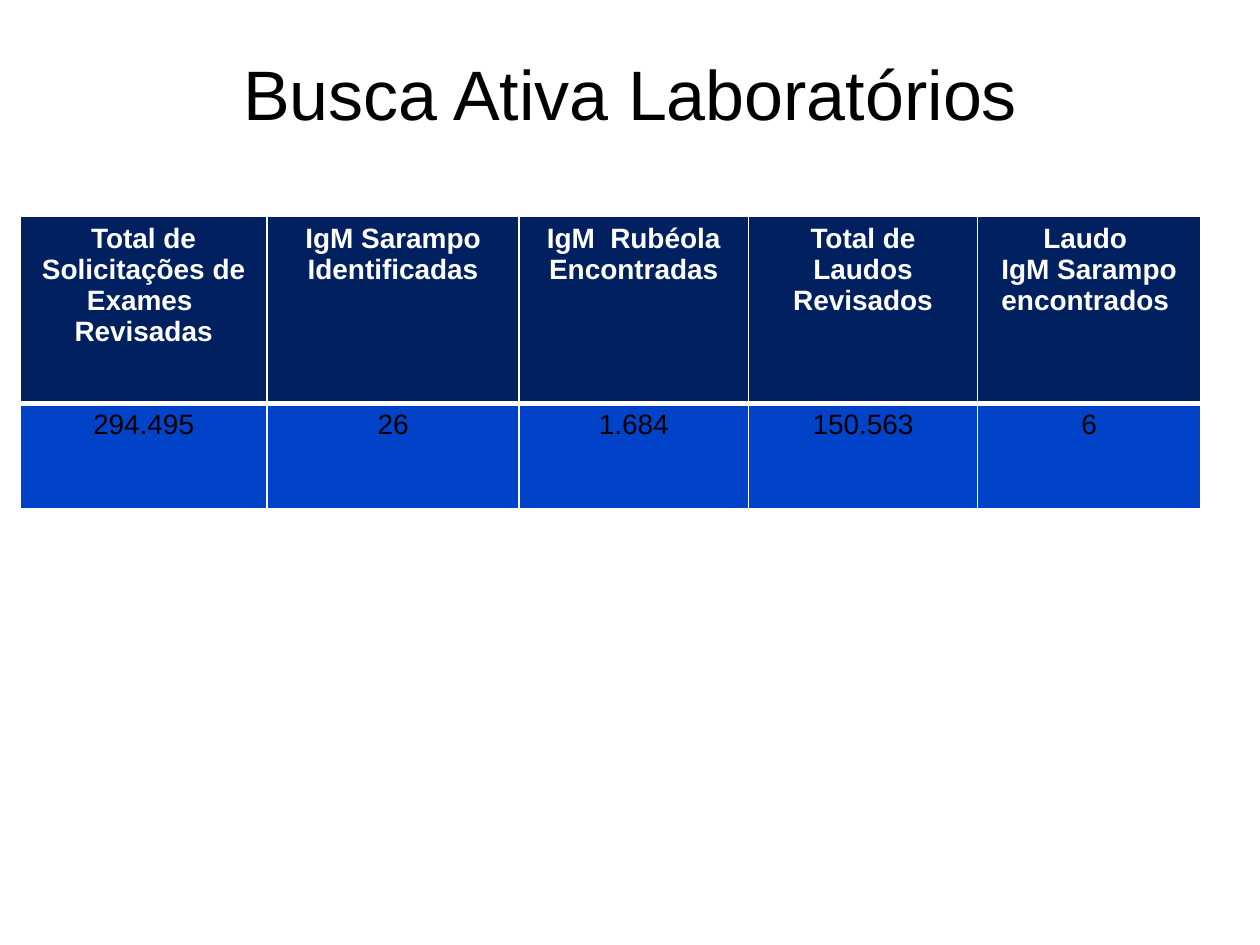
from pptx import Presentation
from pptx.dml.color import RGBColor
from pptx.enum import text
from pptx.oxml import parse_xml
from pptx.oxml import ns
from pptx.util import Inches, Pt


def rgb(value):
    return RGBColor.from_string(value)


class Deck:
    """Holds the style and the current slide, and adds its elements."""

    font = "Arial"
    black, white = "000000", "FFFFFF"
    header_fill, body_fill = "002060", "0043C8"

    def __init__(self, prs):
        self.s = prs.slides.add_slide(prs.slide_layouts[5])

    def add_text(self, p, words, size, color, bold=False):
        p.alignment = text.PP_ALIGN.CENTER
        r = p.add_run()
        r.text = words
        r.font.name = self.font
        r.font.size = Pt(size)
        r.font.bold = bold
        r.font.color.rgb = rgb(color)

    def title(self, words, left, top, width, height):
        sp = self.s.shapes.title
        sp.left, sp.top = Inches(left), Inches(top)
        sp.width, sp.height = Inches(width), Inches(height)
        tf = sp.text_frame
        tf.vertical_anchor = text.MSO_ANCHOR.TOP
        tf.margin_top = Inches(0.1)
        self.add_text(tf.paragraphs[0], words, 40, self.black)

    def borders(self, cell, **widths):
        tc_pr = cell._tc.get_or_add_tcPr()
        for side in "LRTB":
            tc_pr.append(parse_xml(
                f'<a:ln{side} {ns.nsdecls("a")} w="{Pt(widths.get(side, 1))}">'
                f'<a:solidFill><a:srgbClr val="{self.white}"/></a:solidFill>'
                f'</a:ln{side}>'))

    def cell(self, cell, words, header):
        self.borders(cell, **({"B": 3} if header else {"T": 3}))
        cell.fill.solid()
        cell.fill.fore_color.rgb = rgb(self.header_fill if header else self.body_fill)
        tf = cell.text_frame
        for i, line in enumerate(words.split("\n")):
            p = tf.add_paragraph() if i else tf.paragraphs[0]
            self.add_text(p, line, 16, self.white if header else self.black, header)

    def table(self, rows, left, top, widths, heights):
        table = self.s.shapes.add_table(
            len(rows), len(widths), Inches(left), Inches(top),
            Inches(sum(widths)), Inches(sum(heights))).table
        for column, width in zip(table.columns, widths):
            column.width = Inches(width)
        for i, (row, height) in enumerate(zip(rows, heights)):
            table.rows[i].height = Inches(height)
            for j, words in enumerate(row):
                self.cell(table.cell(i, j), words, i == 0)


def main():
    prs = Presentation()
    prs.slide_width, prs.slide_height = Inches(10), Inches(7.5)
    deck = Deck(prs)
    deck.title("Busca Ativa Laboratórios", 0.5, 0.3, 9, 1.25)
    deck.table(
        [["Total de Solicitações de Exames  Revisadas",
          "IgM Sarampo Identificadas",
          "IgM  Rubéola Encontradas",
          "Total de Laudos Revisados",
          "Laudo \nIgM Sarampo encontrados "],
         ["294.495", "26", "1.684", "150.563", "6"]],
        0.16, 1.72, [1.96, 2, 1.82, 1.82, 1.77], [1.48, 0.84])
    prs.save("out.pptx")


if __name__ == "__main__":
    main()
